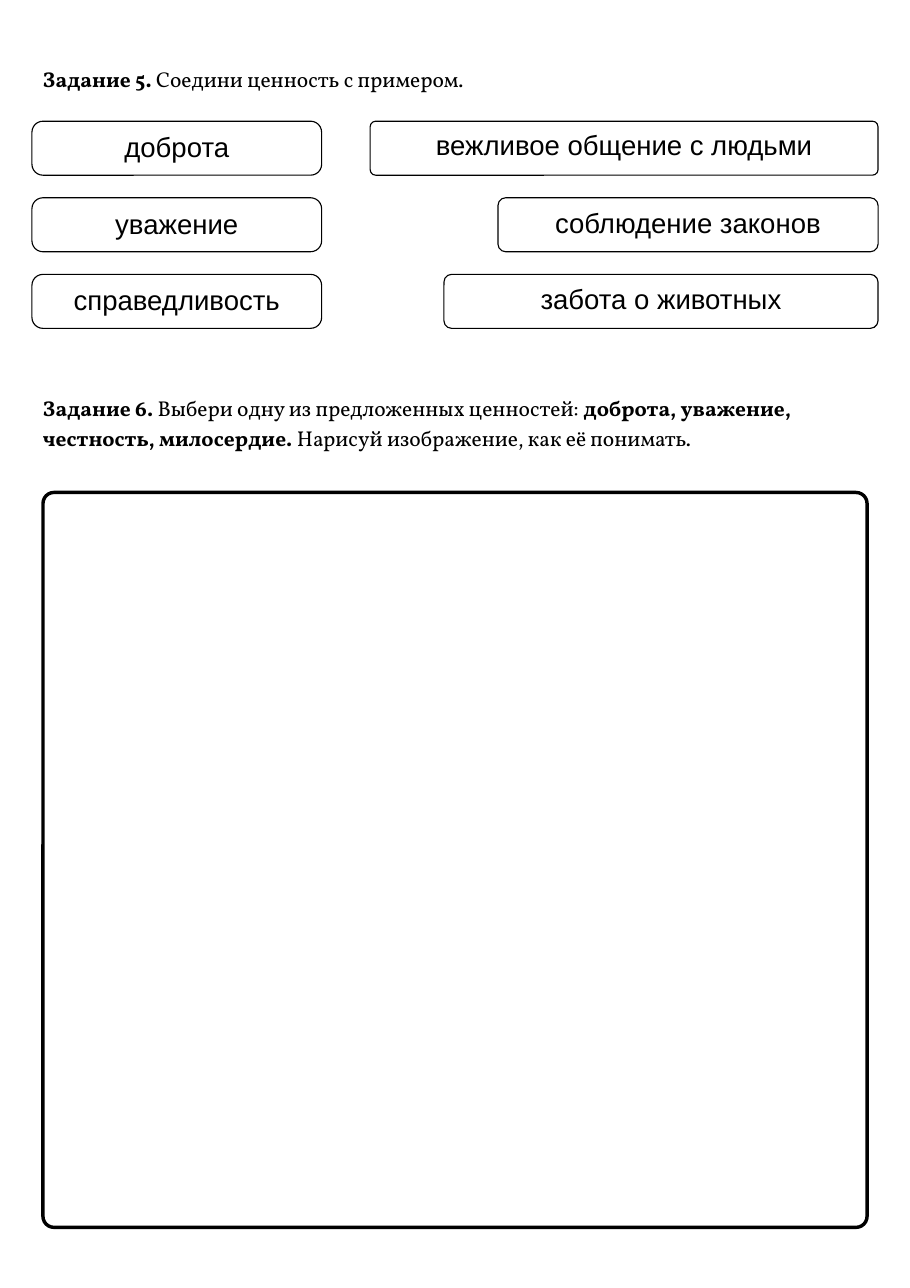
from pptx import Presentation
from pptx.dml.color import RGBColor
from pptx.enum.shapes import MSO_SHAPE
from pptx.enum.text import MSO_ANCHOR, PP_ALIGN
from pptx.util import Inches, Pt

# Content: tasks as (text, bold) runs, cards as (text, width, corner radius)
TASK_5 = [("Задание 5.", True), (" Соедини ценность с примером.", False)]
TASK_6 = [
    ("Задание 6. ", True),
    ("Выбери одну из предложенных ценностей: ", False),
    ("доброта, уважение, честность, милосердие.", True),
    (" Нарисуй изображение, как её понимать.", False),
]
VALUES = [("доброта", 2.63, 0.1), ("уважение", 2.63, 0.1), ("справедливость", 2.63, 0.1)]
EXAMPLES = [
    ("вежливое общение с людьми", 4.61, 0.05),
    ("соблюдение законов", 3.45, 0.07),
    ("забота о животных", 3.94, 0.07),
]

# Page grid, in inches
PAGE_W, PAGE_H = 8.26, 11.69
MARGIN = 0.39
CONTENT_W = PAGE_W - 2 * MARGIN
CARD_MARGIN = 0.29
CARD_TOP, CARD_LAST, CARD_H = 1.1, 2.49, 0.49
ROW_STEP = (CARD_LAST - CARD_TOP) / (len(VALUES) - 1)
FRAME_TOP, FRAME_H, FRAME_RADIUS = 4.47, 6.67, 0.1
INK, PAPER = "000000", "FFFFFF"


def color(hex_code):
    return RGBColor.from_string(hex_code)


def write(frame, runs, font, size, line, align):
    frame.word_wrap = True
    frame.vertical_anchor = MSO_ANCHOR.TOP
    frame.margin_left = frame.margin_right = 0
    frame.margin_top = frame.margin_bottom = 0
    paragraph = frame.paragraphs[0]
    paragraph.alignment = align
    paragraph.line_spacing = Pt(line)
    for text, bold in runs:
        run = paragraph.add_run()
        run.text = text
        run.font.name, run.font.size, run.font.bold = font, Pt(size), bold
        run.font.color.rgb = color(INK)


def add_task(slide, top, lines, runs):
    task = slide.shapes.add_textbox(
        Inches(MARGIN), Inches(top), Inches(CONTENT_W), Inches(lines * 0.27))
    write(task.text_frame, runs, "Vollkorn", 14, 19.6, PP_ALIGN.LEFT)


def add_rounded(slide, left, top, width, height, radius, line_width):
    rounded = slide.shapes.add_shape(
        MSO_SHAPE.ROUNDED_RECTANGLE,
        Inches(left), Inches(top), Inches(width), Inches(height))
    rounded.adjustments[0] = radius / min(width, height)
    rounded.shadow.inherit = False
    rounded.fill.background()
    rounded.line.color.rgb = color(INK)
    rounded.line.width = Pt(line_width)
    return rounded


def add_card(slide, left, row, text, width, radius):
    card = add_rounded(
        slide, left, CARD_TOP + row * ROW_STEP, width, CARD_H, radius, 0.75)
    card.fill.solid()
    card.fill.fore_color.rgb = color(PAPER)
    write(card.text_frame, [(text, False)], "Arial", 18, 25.2, PP_ALIGN.CENTER)


def main():
    deck = Presentation()
    deck.slide_width, deck.slide_height = Inches(PAGE_W), Inches(PAGE_H)
    slide = deck.slides.add_slide(deck.slide_layouts[6])

    # Task 5: values on the left, examples flush right
    add_task(slide, 0.56, 1, TASK_5)
    for row, (value, example) in enumerate(zip(VALUES, EXAMPLES)):
        add_card(slide, CARD_MARGIN, row, *value)
        add_card(slide, PAGE_W - CARD_MARGIN - example[1], row, *example)

    # Task 6: instruction and drawing frame
    add_task(slide, 3.55, 2, TASK_6)
    add_rounded(slide, MARGIN, FRAME_TOP, CONTENT_W, FRAME_H, FRAME_RADIUS, 2.25)

    deck.save("out.pptx")


if __name__ == "__main__":
    main()
